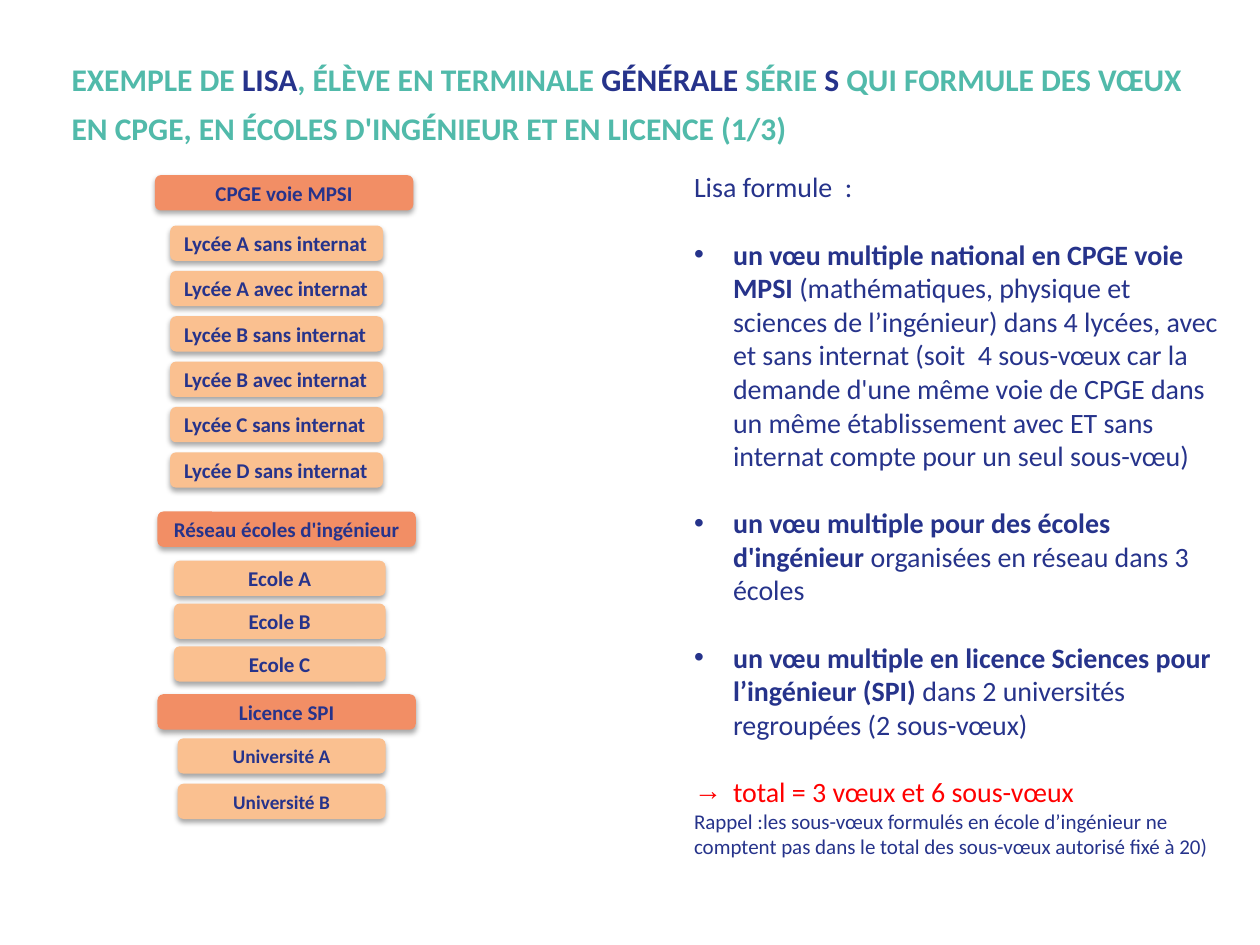
from pptx import Presentation
from pptx.dml.color import RGBColor
from pptx.enum.shapes import MSO_SHAPE
from pptx.enum.text import MSO_ANCHOR, PP_ALIGN
from pptx.oxml import parse_xml
from pptx.oxml.ns import nsdecls
from pptx.util import Inches, Pt

NAVY, TEAL, RED = "26338B", "51BAAA", "FF0000"
CORAL, PEACH = "F28E65", "FAC090"
BOX_HEIGHT = 0.28


def color(value):
    return RGBColor.from_string(value)


class SlideBuilder:
    font_name = "Calibri"

    def __init__(self, slide):
        self.slide = slide

    def style(self, font, size, fill=None, bold=None):
        font.name = self.font_name
        font.size = Pt(size)
        font.bold = bold
        if fill:
            font.color.rgb = color(fill)

    def text_frame(self, left, top, width, height, anchor=MSO_ANCHOR.TOP):
        box = self.slide.shapes.add_textbox(
            Inches(left), Inches(top), Inches(width), Inches(height))
        frame = box.text_frame
        frame.word_wrap = True
        frame.vertical_anchor = anchor
        return frame

    def title(self, parts):
        frame = self.text_frame(0.47, 0.18, 9.33, 1.2, MSO_ANCHOR.MIDDLE)
        paragraph = frame.paragraphs[0]
        paragraph.line_spacing = Pt(28)
        self.style(paragraph.font, 18, bold=True)
        for text, fill in parts:
            run = paragraph.add_run()
            run.text = text
            run.font.color.rgb = color(fill)

    def paragraph(self, paragraph, parts, size=16, fill=NAVY, bullet=None, gap=0):
        """Parts alternate: bold first when there are two of them."""
        if bullet:
            properties = paragraph._p.get_or_add_pPr()
            properties.set("marL", str(Inches(0.31)))
            properties.set("indent", str(-Inches(0.31)))
            properties.append(parse_xml(
                f'<a:buFont {nsdecls("a")} typeface="Arial"/>'))
            properties.append(parse_xml(
                f'<a:buChar {nsdecls("a")} char="{bullet}"/>'))
        if gap:
            paragraph.space_before = Pt(gap)
        self.style(paragraph.font, size, fill)
        for index, text in enumerate(parts):
            run = paragraph.add_run()
            run.text = text
            if len(parts) > 1:
                run.font.bold = index == 0

    def box(self, text, left, top, width, fill, size=12, align=PP_ALIGN.CENTER):
        shape = self.slide.shapes.add_shape(
            MSO_SHAPE.ROUNDED_RECTANGLE, Inches(left), Inches(top),
            Inches(width), Inches(BOX_HEIGHT))
        shape.fill.solid()
        shape.fill.fore_color.rgb = color(fill)
        shape.line.fill.background()
        self.soft_shadow(shape)
        frame = shape.text_frame
        frame.word_wrap = True
        frame.vertical_anchor = MSO_ANCHOR.MIDDLE
        paragraph = frame.paragraphs[0]
        paragraph.text = text
        paragraph.alignment = align
        self.style(paragraph.font, size, NAVY, True)

    def soft_shadow(self, shape):
        shape.shadow.inherit = False
        effects = shape._element.spPr.find(
            "{http://schemas.openxmlformats.org/drawingml/2006/main}effectLst")
        effects.append(parse_xml(
            f'<a:outerShdw {nsdecls("a")} blurRad="{Pt(3.1)}" dist="{Pt(1.8)}" '
            'dir="5400000" rotWithShape="0"><a:srgbClr val="000000">'
            '<a:alpha val="35000"/></a:srgbClr></a:outerShdw>'))

    def column(self, labels, left, top, width, pitch, **options):
        for index, label in enumerate(labels):
            self.box(label, left, top + index * pitch, width, PEACH, **options)


def main():
    presentation = Presentation()
    presentation.slide_width = Inches(10)
    presentation.slide_height = Inches(7.5)
    builder = SlideBuilder(
        presentation.slides.add_slide(presentation.slide_layouts[6]))

    # Title
    builder.title([
        ("EXEMPLE DE ", TEAL), ("LISA", NAVY),
        (", ÉLÈVE EN TERMINALE ", TEAL), ("GÉNÉRALE", NAVY),
        (" SÉRIE ", TEAL), ("S", NAVY),
        (" QUI FORMULE DES VŒUX EN CPGE, EN ÉCOLES D'INGÉNIEUR "
         "ET EN LICENCE (1/3)", TEAL),
    ])

    # Headings of the three groups of wishes
    for heading, left, top in [("CPGE voie MPSI", 1.23, 1.39),
                               ("Réseau écoles d'ingénieur", 1.25, 4.06),
                               ("Licence SPI", 1.25, 5.51)]:
        builder.box(heading, left, top, 2.05, CORAL)

    # Schools of each group
    lycees = [f"Lycée {name} internat" for name in (
        "A sans", "A avec", "B sans", "B avec", "C sans", "D sans")]
    builder.column(lycees, 1.35, 1.79, 1.69, 0.36, align=PP_ALIGN.LEFT)
    builder.column([f"Ecole {letter}" for letter in "ABC"],
                   1.38, 4.45, 1.68, 0.34)
    builder.column([f"Université {letter}" for letter in "AB"],
                   1.41, 5.86, 1.65, 0.36, size=11)

    # Explanation
    frame = builder.text_frame(5.41, 1.3, 4.45, 5.86)
    builder.paragraph(frame.paragraphs[0], ["Lisa formule  :"])
    wishes = [
        ("un vœu multiple national en CPGE voie MPSI ",
         "(mathématiques, physique et sciences de l’ingénieur) dans 4 lycées, "
         "avec et sans internat (soit  4 sous-vœux car la demande d'une même "
         "voie de CPGE dans un même établissement avec ET sans internat compte "
         "pour un seul sous-vœu)"),
        ("un vœu multiple pour des écoles d'ingénieur",
         " organisées en réseau dans 3 écoles"),
        ("un vœu multiple en licence Sciences pour l’ingénieur (SPI) ",
         "dans 2 universités regroupées (2 sous-vœux)"),
    ]
    for wish in wishes:
        builder.paragraph(frame.add_paragraph(), wish, bullet="•", gap=19.2)
    builder.paragraph(frame.add_paragraph(), ["total = 3 vœux et 6 sous-vœux"],
                      fill=RED, bullet="→", gap=19.2)
    builder.paragraph(frame.add_paragraph(), [
        "Rappel :les sous-vœux formulés en école d’ingénieur ne comptent pas "
        "dans le total des sous-vœux autorisé fixé à 20)"], size=12)

    presentation.save("out.pptx")


if __name__ == "__main__":
    main()
